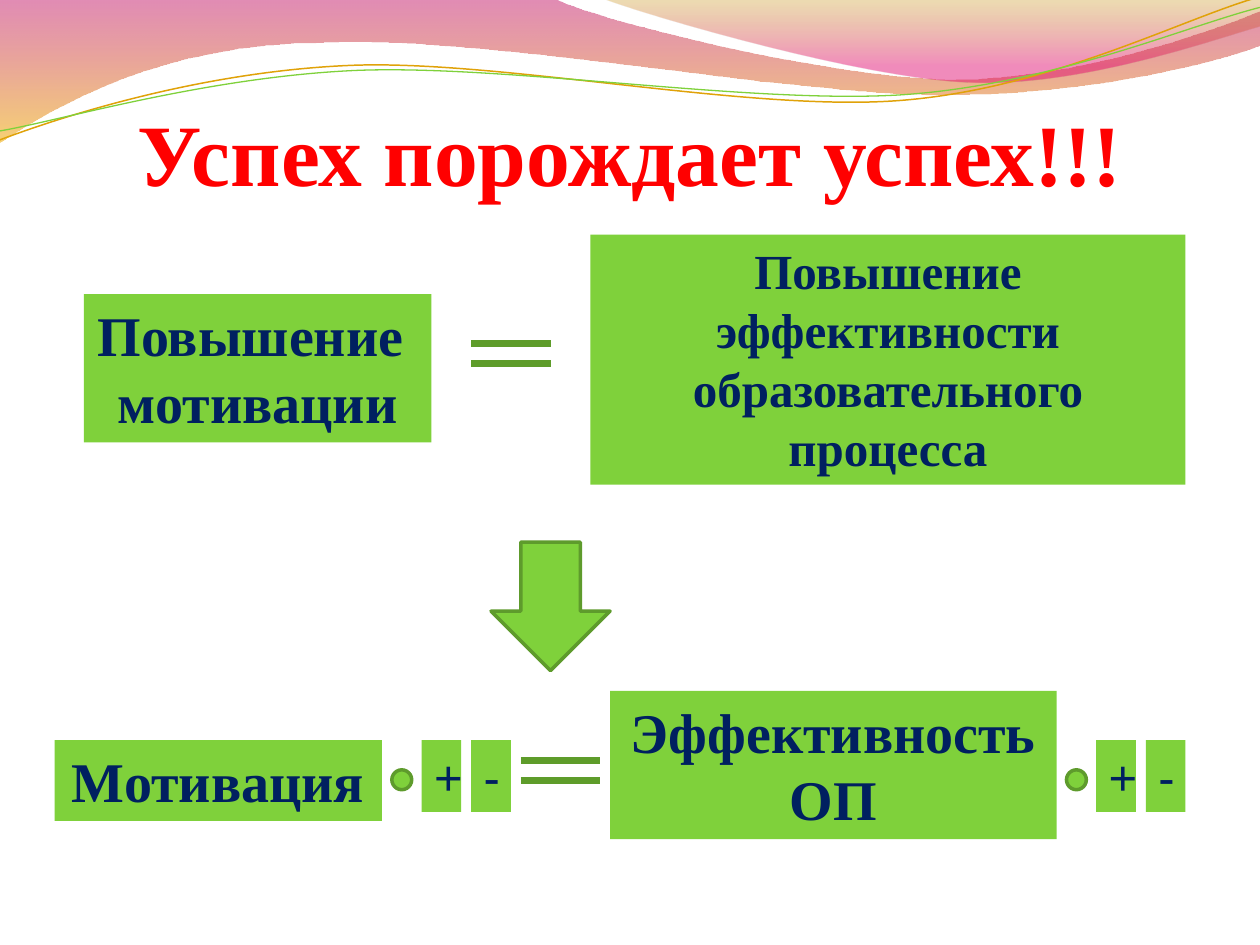
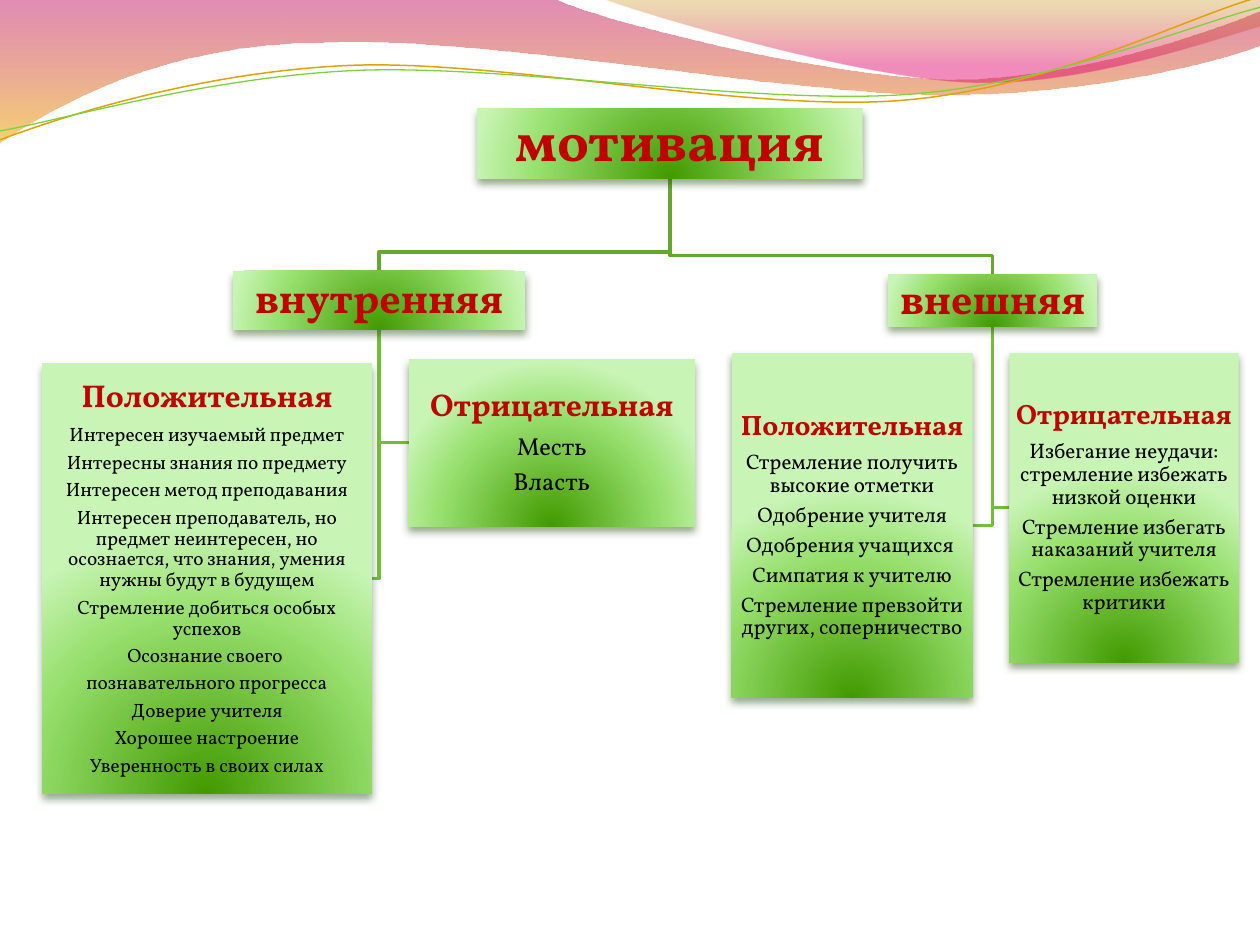
from dataclasses import dataclass

import lxml.etree
import pptx
import pptx.dml.color
import pptx.enum.shapes
import pptx.enum.text
import pptx.oxml.ns
import pptx.util

Cm = pptx.util.Cm
Pt = pptx.util.Pt
SHAPES = pptx.enum.shapes.MSO_SHAPE
ANCHOR = pptx.enum.text.MSO_ANCHOR


@dataclass(frozen=True)
class Theme:
    serif: str = "Times New Roman"
    sign_font: str = "Arial"
    tree_font: str = "Vollkorn"
    title: str = "FF0000"
    navy: str = "002060"
    heading: str = "C00000"
    body: str = "000000"
    green: str = "7FD13B"
    outline: str = "5E9B2C"
    bar: str = "5E9C2A"
    gold: str = "E0A209"
    root_link: str = "66A72F"
    leaf_link: str = "73BE36"
    shadow: str = "2C4B13"
    title_size: int = 50
    large_size: int = 32
    medium_size: int = 28
    branch_size: int = 24


THEME = Theme()

WAVE_BANDS = [
    ((0, 0),
     [[(11.22, 0)],
      [(12.09, 0.43), (16.87, 1.6), (19.25, 1.6)],
      [(21.67, 1.6), (24.33, 0.66), (25.4, 0.23)],
      [(25.4, 0.91)],
      [(24.97, 1.12), (22.1, 1.93), (18.95, 1.91)],
      [(15.8, 1.91), (9.7, 0.71), (6.53, 0.86)],
      [(3.25, 0.89), (1.17, 2.11), (0, 2.87)]],
     [(0, "BD0059", 45), (100, "F0AB00", 55)]),
    ((12.21, 0),
     [[(12.93, 0.28), (17.32, 1.57), (19.53, 1.65)],
      [(21.74, 1.75), (24.41, 0.81), (25.4, 0.53)],
      [(25.4, 0)]],
     [(0, "C38B00", 30), (80, "E1006B", 45)]),
]
WAVE_LINES = [
    ((0, 2.82),
     [[(1.22, 2.36), (4.01, 1.45), (7.04, 1.32)],
      [(10.03, 1.19), (15.06, 2.26), (18.11, 2.03)],
      [(21.16, 1.8), (23.83, 0.38), (25.35, -0.05)]],
     THEME.gold, 0.85),
    ((0, 2.64),
     [[(1.19, 2.44), (4.17, 1.55), (7.19, 1.42)],
      [(10.24, 1.3), (15.16, 2.11), (18.21, 1.91)],
      [(21.23, 1.7), (23.9, 0.53), (25.4, 0.15)]],
     THEME.green, 0.75),
]

TITLE = ("Успех порождает успех!!!", (1.27, 1.96, 22.86, 2.16))
FORMULA_BOXES = [
    (["Повышение ", "мотивации"], (1.69, 5.93, 7.01, 2.99), THEME.large_size),
    (["Повышение эффективности образовательного процесса"],
     (11.9, 4.73, 12, 5.04), THEME.medium_size),
    (["Мотивация"], (1.1, 14.92, 6.6, 1.63), THEME.large_size),
    (["Эффективность ОП"], (12.3, 13.93, 9, 2.99), THEME.large_size),
]
SIGN_GROUPS = [7.9, 21.5]
SIGNS = [("+", 0.6), ("-", 1.6)]
SIGN_TOP, SIGN_WIDTH, SIGN_HEIGHT = 14.92, 0.8, 1.45
DOT_TOP, DOT_SIZE = 15.52, 0.4
EQUALS_SIGNS = [(9.5, 6.93), (10.5, 15.33)]
EQUALS_WIDTH, EQUALS_GAP = 1.6, 0.4
ARROW = (9.9, 10.93, 2.4, 2.59)

ROOT = ("мотивация", (9.62, 2.18, 7.77, 1.42))
BRANCHES = [
    ("внутренняя", (4.7, 5.46, 5.89, 1.19), [
        ("Положительная", (0.85, 7.32, 6.65, 8.68), 18, 11, [
            "Интересен изучаемый предмет",
            "Интересны знания по предмету",
            "Интересен метод преподавания",
            "Интересен преподаватель, но предмет неинтересен, но осознается, "
            "что знания, умения нужны будут в будущем",
            "Стремление добиться особых успехов",
            "Осознание своего ",
            "познавательного прогресса",
            "Доверие учителя",
            "Хорошее настроение",
            "Уверенность в своих силах"]),
        ("Отрицательная", (8.24, 7.24, 5.77, 3.37), 18, 14, ["Месть", "Власть"]),
    ]),
    ("внешняя", (17.9, 5.53, 4.22, 1.06), [
        ("Положительная", (14.75, 7.11, 4.86, 6.96), 16, 12, [
            "Стремление получить высокие отметки",
            "Одобрение учителя",
            "Одобрения учащихся ",
            "Симпатия к учителю",
            "Стремление превзойти других, соперничество"]),
        ("Отрицательная", (20.35, 7.11, 4.62, 6.24), 16, 12, [
            "Избегание неудачи: стремление избежать низкой оценки",
            "Стремление избегать наказаний учителя",
            "Стремление избежать критики"]),
    ]),
]
BEND = 0.38
NODE_STOPS = [(0, "429A00", 100), (68, "98E06F", 100), (100, "C8F4B5", 100)]


def rgb(color):
    return pptx.dml.color.RGBColor.from_string(color)


def add_node(parent, tag, **attributes):
    node = lxml.etree.SubElement(parent, pptx.oxml.ns.qn(tag))
    for name, value in attributes.items():
        node.set(name, str(value))
    return node


def add_color(parent, color, opacity):
    node = add_node(parent, "a:srgbClr", val=color)
    if opacity < 100:
        add_node(node, "a:alpha", val=opacity * 1000)


def set_gradient(shape, stops, radial=False):
    properties = shape.element.spPr
    gradient = add_node(properties, "a:gradFill", rotWithShape=1)
    stop_list = add_node(gradient, "a:gsLst")
    for position, color, opacity in stops:
        add_color(add_node(stop_list, "a:gs", pos=position * 1000), color, opacity)
    if radial:
        circle = add_node(gradient, "a:path", path="circle")
        add_node(circle, "a:fillToRect", l=50000, t=130000, r=50000, b=-30000)
    else:
        add_node(gradient, "a:lin", ang=5400000, scaled=0)
    properties.insert(2, gradient)


def set_line(shape, color=None, width=None):
    if color is None:
        shape.line.fill.background()
    else:
        shape.line.color.rgb = rgb(color)
        shape.line.width = Pt(width)


def add_outline(slide, points, color=None, width=None, closed=False):
    lengths = [(Cm(x), Cm(y)) for x, y in points]
    builder = slide.shapes.build_freeform(*lengths[0], scale=1.0)
    builder.add_line_segments(lengths[1:], close=closed)
    shape = builder.convert_to_shape()
    shape.shadow.inherit = False
    if not closed:
        shape.fill.background()
    set_line(shape, color, width)
    return shape


def add_curve(slide, start, segments, **style):
    shape = add_outline(slide, [start] + [segment[-1] for segment in segments], **style)
    lines = list(shape.element.spPr.iter(pptx.oxml.ns.qn("a:lnTo")))
    for line, segment in zip(lines, segments):
        if len(segment) == 3:
            curve = add_node(line.getparent(), "a:cubicBezTo")
            for x, y in segment:
                add_node(curve, "a:pt", x=Cm(x) - shape.left, y=Cm(y) - shape.top)
            line.getparent().replace(line, curve)
    return shape


def add_waves(slide):
    for start, segments, stops in WAVE_BANDS:
        set_gradient(add_curve(slide, start, segments, closed=True), stops)
    for start, segments, color, width in WAVE_LINES:
        add_curve(slide, start, segments, color=color, width=width)


def add_preset(slide, kind, box, line_color=None):
    shape = slide.shapes.add_shape(kind, *map(Cm, box))
    shape.shadow.inherit = False
    shape.fill.solid()
    shape.fill.fore_color.rgb = rgb(THEME.green)
    set_line(shape, line_color, 2)
    return shape


def write(shape, lines, styles, anchor, margins=None):
    frame = shape.text_frame
    frame.word_wrap = True
    frame.vertical_anchor = anchor
    if margins:
        horizontal, vertical = map(Cm, margins)
        frame.margin_left = frame.margin_right = horizontal
        frame.margin_top = frame.margin_bottom = vertical
    frame.text = "\n".join(lines)
    for paragraph, (name, size, color, bold) in zip(frame.paragraphs, styles):
        paragraph.alignment = pptx.enum.text.PP_ALIGN.CENTER
        for run in paragraph.runs:
            run.font.name = name
            run.font.size = Pt(size)
            run.font.color.rgb = rgb(color)
            run.font.bold = bold


def add_formula_box(slide, lines, box, style):
    shape = add_preset(slide, SHAPES.RECTANGLE, box)
    write(shape, lines, [style] * len(lines), ANCHOR.TOP)


def add_tree_box(slide, heading, box, heading_size, lines=(), size=0):
    shape = slide.shapes.add_shape(SHAPES.RECTANGLE, *map(Cm, box))
    set_gradient(shape, NODE_STOPS, radial=True)
    set_line(shape)
    shape.shadow.inherit = False
    effects = shape.element.spPr.find(pptx.oxml.ns.qn("a:effectLst"))
    shadow = add_node(effects, "a:outerShdw", blurRad=Pt(4.5), dist=Pt(3),
                      dir=5400000, rotWithShape=0)
    add_color(shadow, THEME.shadow, 48)
    styles = [(THEME.tree_font, heading_size, THEME.heading, True)]
    styles += [(THEME.tree_font, size, THEME.body, False)] * len(lines)
    write(shape, [heading, *lines], styles, ANCHOR.MIDDLE, (0.03, 0.03))
    for paragraph, style in zip(shape.text_frame.paragraphs, styles):
        paragraph.line_spacing = 0.9
        paragraph.space_after = Pt(0.35 * style[1])


def bottom_center(box):
    left, top, width, height = box
    return left + width / 2, top + height


def build_formula_slide(slide):
    text, box = TITLE
    write(slide.shapes.add_textbox(*map(Cm, box)), [text],
          [(THEME.serif, THEME.title_size, THEME.title, True)], ANCHOR.BOTTOM, (0, 0))
    for lines, box, size in FORMULA_BOXES:
        add_formula_box(slide, lines, box, (THEME.serif, size, THEME.navy, True))
    for left in SIGN_GROUPS:
        add_preset(slide, SHAPES.OVAL, (left, DOT_TOP, DOT_SIZE, DOT_SIZE), THEME.outline)
        for sign, offset in SIGNS:
            add_formula_box(slide, [sign], (left + offset, SIGN_TOP, SIGN_WIDTH, SIGN_HEIGHT),
                            (THEME.sign_font, THEME.medium_size, THEME.navy, False))
    for left, top in EQUALS_SIGNS:
        for y in (top, top + EQUALS_GAP):
            bar = slide.shapes.add_connector(
                pptx.enum.shapes.MSO_CONNECTOR.STRAIGHT,
                Cm(left), Cm(y), Cm(left + EQUALS_WIDTH), Cm(y))
            set_line(bar, THEME.bar, 4)
            add_node(bar.element.spPr, "a:effectLst")
    add_preset(slide, SHAPES.DOWN_ARROW, ARROW, THEME.outline)


def build_tree_slide(slide):
    root_text, root_box = ROOT
    root_x, root_y = bottom_center(root_box)
    for _, box, leaves in BRANCHES:
        x, y = bottom_center(box)
        top = box[1]
        add_outline(slide, [(root_x, root_y), (root_x, top - BEND), (x, top - BEND), (x, top)],
                    THEME.root_link, 2)
        for _, (left, leaf_top, width, height), *_ in leaves:
            middle = leaf_top + height / 2
            side = left if left > x else left + width
            add_outline(slide, [(x, y), (x, middle), (side, middle)], THEME.leaf_link, 2)
    add_tree_box(slide, root_text, root_box, THEME.large_size)
    for text, box, leaves in BRANCHES:
        add_tree_box(slide, text, box, THEME.branch_size)
        for heading, leaf_box, heading_size, size, lines in leaves:
            add_tree_box(slide, heading, leaf_box, heading_size, lines, size)


def main():
    presentation = pptx.Presentation()
    presentation.slide_width = Cm(25.4)
    presentation.slide_height = Cm(19.05)
    for build in (build_formula_slide, build_tree_slide):
        slide = presentation.slides.add_slide(presentation.slide_layouts[6])
        add_waves(slide)
        build(slide)
    presentation.save("out.pptx")


if __name__ == "__main__":
    main()
